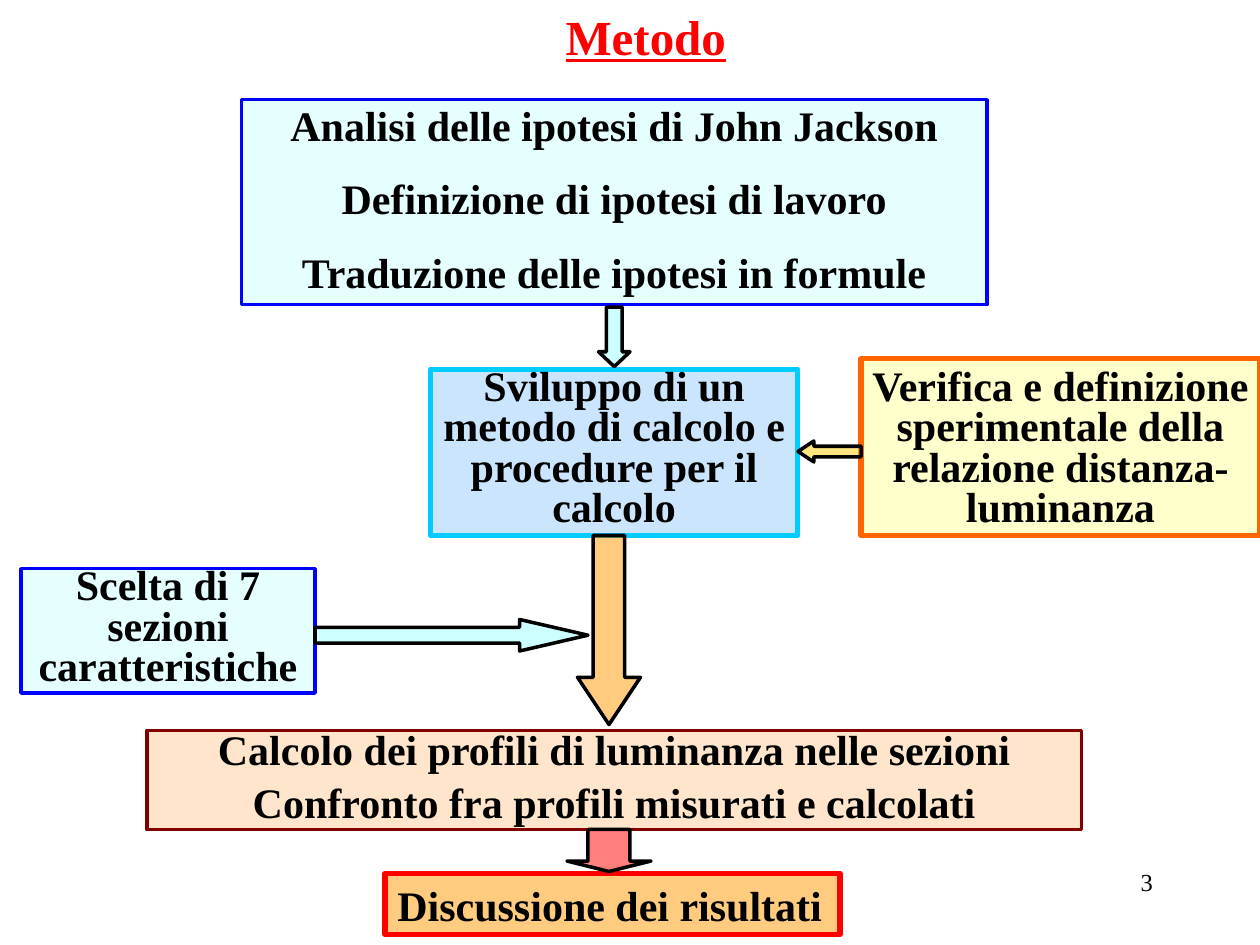
from dataclasses import dataclass

from lxml import etree
from pptx import Presentation
from pptx.dml.color import RGBColor
from pptx.enum.shapes import MSO_SHAPE
from pptx.enum.text import MSO_ANCHOR, MSO_AUTO_SIZE, PP_ALIGN
from pptx.oxml.ns import qn
from pptx.util import Pt

RECTANGLE = MSO_SHAPE.RECTANGLE
RIGHT_ARROW, LEFT_ARROW = MSO_SHAPE.RIGHT_ARROW, MSO_SHAPE.LEFT_ARROW
TOP = MSO_ANCHOR.TOP
LEFT, CENTER, RIGHT = PP_ALIGN.LEFT, PP_ALIGN.CENTER, PP_ALIGN.RIGHT
FIXED_SIZE = MSO_AUTO_SIZE.NONE


@dataclass(frozen=True)
class Theme:
    """Colours, font and type sizes of the slide."""
    font: str = "Times New Roman"
    title_size: int = 28
    body_size: int = 24
    number_size: int = 14
    paragraph_gap: int = 13
    black: str = "000000"
    red: str = "FF0000"
    blue: str = "0000FF"
    sky: str = "00CCFF"
    maroon: str = "800000"
    dark_orange: str = "FF6600"
    orange: str = "FF9900"
    gold: str = "FFCC00"
    pale_cyan: str = "CCFFFF"
    pale_blue: str = "99CCFF"
    pale_yellow: str = "FFFF99"
    peach: str = "FFCC99"


THEME = Theme()


def points(*lengths):
    """Convert plain numbers to lengths in points."""
    return [Pt(length) for length in lengths]


def write(frame, lines, size, color=THEME.black, bold=True, underline=None,
          align=CENTER, spacing=1.0, insets=(7.2, 3.6, 7.2, 3.6), wrap=True):
    """Fill a text frame with one paragraph per line."""
    frame.auto_size = FIXED_SIZE
    frame.word_wrap = wrap
    frame.vertical_anchor = TOP
    (frame.margin_left, frame.margin_top,
     frame.margin_right, frame.margin_bottom) = points(*insets)
    for index, line in enumerate(lines):
        paragraph = frame.add_paragraph() if index else frame.paragraphs[0]
        paragraph.alignment = align
        paragraph.line_spacing = spacing
        paragraph.space_before = Pt(THEME.paragraph_gap if index else 0)
        run = paragraph.add_run()
        run.text = line
        font = run.font
        font.name, font.size = THEME.font, Pt(size)
        font.bold, font.underline = bold, underline
        font.color.rgb = RGBColor.from_string(color)


def add_outlined(slide, preset, place, fill, line, weight, translucent=True):
    """Add a filled, outlined preset shape without a shadow."""
    shape = slide.shapes.add_shape(preset, *points(*place))
    shape.shadow.inherit = False
    shape.fill.solid()
    shape.fill.fore_color.rgb = RGBColor.from_string(fill)
    if translucent:
        color = shape.fill._xPr.find(qn("a:solidFill"))[0]
        etree.SubElement(color, qn("a:alpha"), val="50000")
    shape.line.color.rgb = RGBColor.from_string(line)
    shape.line.width = Pt(weight)
    return shape


def add_step(slide, place, fill, line, weight, lines, insets=(0, 0, 0, 0), **text):
    """Add one step of the method as a box with text."""
    step = add_outlined(slide, RECTANGLE, place, fill, line, weight)
    write(step.text_frame, lines, THEME.body_size, insets=insets, **text)


def add_block_arrow(slide, preset, place, rotation, head, fill, translucent=True):
    """Add a block arrow between two steps."""
    arrow = add_outlined(slide, preset, place, fill, THEME.black, 2, translucent)
    arrow.adjustments[0] = 0.5
    arrow.adjustments[1] = head
    arrow.rotation = rotation


def add_title(slide, title):
    """Place and format the title."""
    heading = slide.shapes.title
    heading.left, heading.top, heading.width, heading.height = points(192, 0, 354, 41)
    write(heading.text_frame, [title], THEME.title_size, THEME.red, underline=True)


def add_page_number(slide, number):
    """Add the page number at the lower right."""
    page = slide.shapes.add_textbox(*points(516, 492, 150, 36))
    write(page.text_frame, [number], THEME.number_size, bold=False, align=RIGHT)


def main():
    """Build the method slide."""
    deck = Presentation()
    deck.slide_width, deck.slide_height = points(720, 540)
    slide = deck.slides.add_slide(deck.slide_layouts[5])
    add_page_number(slide, "3")
    add_title(slide, "Metodo")

    add_step(slide, (138, 57, 426, 117), THEME.pale_cyan, THEME.blue, 2,
             ["Analisi delle ipotesi di John Jackson",
              "Definizione di ipotesi di lavoro",
              "Traduzione delle ipotesi in formule"])
    add_step(slide, (492, 205, 228, 101), THEME.pale_yellow, THEME.dark_orange, 3,
             ["Verifica e definizione sperimentale della relazione distanza-luminanza"],
             insets=(0, 6, 0, 0), spacing=0.8)
    add_step(slide, (246, 211, 210, 95), THEME.pale_blue, THEME.sky, 3,
             ["Sviluppo di un metodo di calcolo e procedure per il calcolo"], spacing=0.8)
    add_step(slide, (12, 325, 168, 71), THEME.pale_cyan, THEME.blue, 2,
             ["Scelta di 7 sezioni caratteristiche"], spacing=0.8)
    add_step(slide, (84, 417.5, 534, 56.5), THEME.peach, THEME.maroon, 2,
             ["Calcolo dei profili di luminanza nelle sezioni",
              "Confronto fra profili misurati e calcolati"],
             insets=(0, 6, 0, 0), spacing=0.6)
    add_step(slide, (220, 499, 260, 35), THEME.orange, THEME.red, 3,
             ["Discussione dei risultati"],
             insets=(7.2, 3.6, 7.2, 0), align=LEFT, wrap=False)

    add_block_arrow(slide, RIGHT_ARROW, (334, 183.5, 34, 18), 90, 0.47,
                    THEME.pale_cyan, translucent=False)
    add_block_arrow(slide, RIGHT_ARROW, (456, 252, 36, 12), 180, 0.75, THEME.gold)
    add_block_arrow(slide, RIGHT_ARROW, (180, 354, 156, 18), 0, 2.17,
                    THEME.pale_cyan, translucent=False)
    add_block_arrow(slide, LEFT_ARROW, (336, 462, 24, 48), 270, 0.25, THEME.red)
    add_block_arrow(slide, LEFT_ARROW, (294, 342, 108, 36), 270, 0.75, THEME.orange)
    deck.save("out.pptx")


if __name__ == "__main__":
    main()
